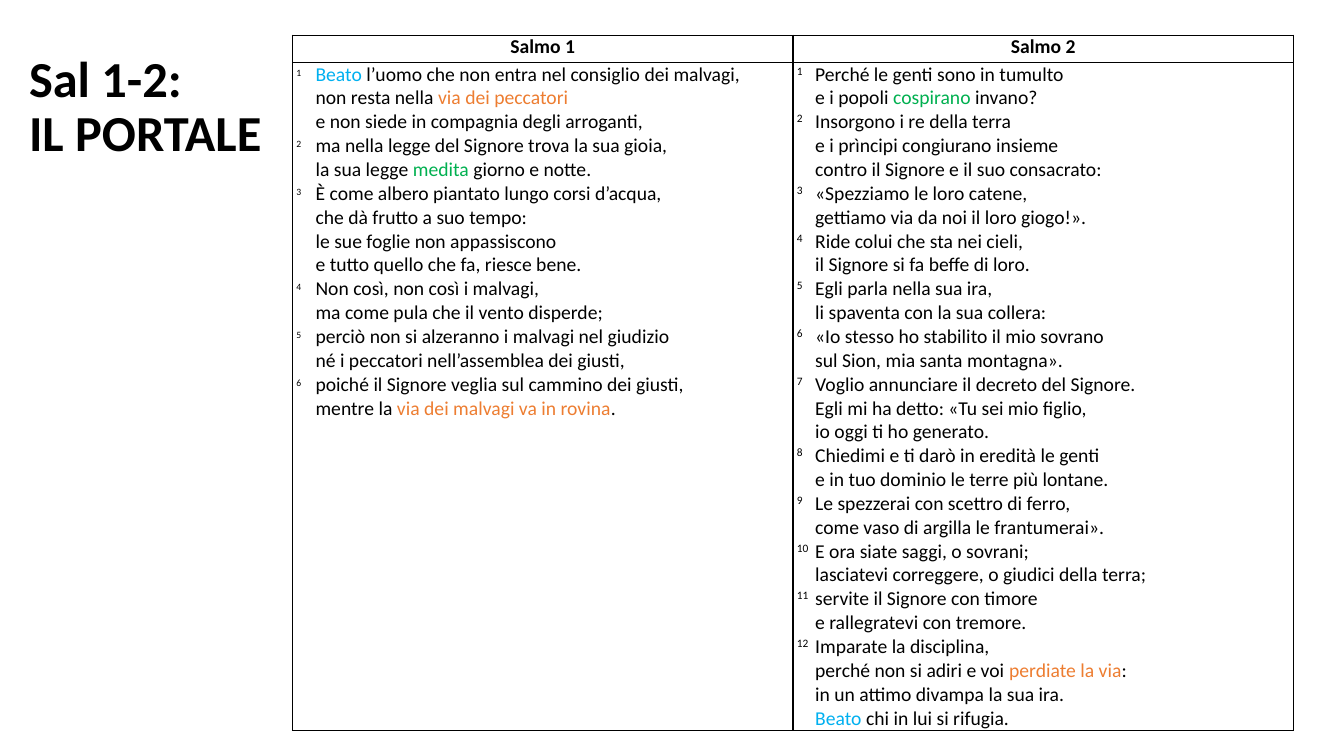
from lxml.etree import SubElement
from pptx import Presentation
from pptx.dml.color import RGBColor
from pptx.enum.text import MSO_ANCHOR, PP_ALIGN
from pptx.oxml.ns import qn
from pptx.util import Emu, Inches, Pt

FONT = "Calibri"
BLACK, BLUE, ORANGE, GREEN = "000000", "00B0F0", "ED7D31", "00B050"

HIGHLIGHTS = {
    "Beato": BLUE,
    "via dei peccatori": ORANGE,
    "via dei malvagi va in rovina": ORANGE,
    "perdiate la via": ORANGE,
    "medita": GREEN,
    "cospirano": GREEN,
}

PSALM_1 = [
    ["Beato l’uomo che non entra nel consiglio dei malvagi,",
     "non resta nella via dei peccatori",
     "e non siede in compagnia degli arroganti,"],
    ["ma nella legge del Signore trova la sua gioia,",
     "la sua legge medita giorno e notte."],
    ["È come albero piantato lungo corsi d’acqua,",
     "che dà frutto a suo tempo:",
     "le sue foglie non appassiscono",
     "e tutto quello che fa, riesce bene."],
    ["Non così, non così i malvagi,",
     "ma come pula che il vento disperde;"],
    ["perciò non si alzeranno i malvagi nel giudizio",
     "né i peccatori nell’assemblea dei giusti,"],
    ["poiché il Signore veglia sul cammino dei giusti,",
     "mentre la via dei malvagi va in rovina."],
]

PSALM_2 = [
    ["Perché le genti sono in tumulto",
     "e i popoli cospirano invano?"],
    ["Insorgono i re della terra",
     "e i prìncipi congiurano insieme",
     "contro il Signore e il suo consacrato:"],
    ["«Spezziamo le loro catene,",
     "gettiamo via da noi il loro giogo!»."],
    ["Ride colui che sta nei cieli,",
     "il Signore si fa beffe di loro."],
    ["Egli parla nella sua ira,",
     "li spaventa con la sua collera:"],
    ["«Io stesso ho stabilito il mio sovrano",
     "sul Sion, mia santa montagna»."],
    ["Voglio annunciare il decreto del Signore.",
     "Egli mi ha detto: «Tu sei mio figlio,",
     "io oggi ti ho generato."],
    ["Chiedimi e ti darò in eredità le genti",
     "e in tuo dominio le terre più lontane."],
    ["Le spezzerai con scettro di ferro,",
     "come vaso di argilla le frantumerai»."],
    ["E ora siate saggi, o sovrani;",
     "lasciatevi correggere, o giudici della terra;"],
    ["servite il Signore con timore",
     "e rallegratevi con tremore."],
    ["Imparate la disciplina,",
     "perché non si adiri e voi perdiate la via:",
     "in un attimo divampa la sua ira.",
     "Beato chi in lui si rifugia."],
]


def rgb(value):
    return RGBColor.from_string(value)


def add_run(p, text, size=14, color=BLACK, bold=False, superscript=False):
    r = p.add_run()
    r.text = text
    r.font.name, r.font.size, r.font.bold = FONT, Pt(size), bold
    r.font.color.rgb = rgb(color)
    if superscript:
        r.font._element.set("baseline", "30000")


def add_tab_stop(p, position):
    tabs = SubElement(p._p.get_or_add_pPr(), qn("a:tabLst"))
    SubElement(tabs, qn("a:tab"), pos=str(Inches(position)), algn="l")


def add_line(p, line):
    phrase = next((h for h in HIGHLIGHTS if h in line), None)
    if phrase is None:
        add_run(p, line)
        return
    before, _, after = line.partition(phrase)
    for text, color in ((before, BLACK), (phrase, HIGHLIGHTS[phrase]), (after, BLACK)):
        if text:
            add_run(p, text, color=color)


def add_verses(tf, verses, number_size, tab):
    p = None
    for number, lines in enumerate(verses, 1):
        for i, line in enumerate(lines):
            p = tf.add_paragraph() if p else tf.paragraphs[0]
            add_tab_stop(p, tab)
            if i == 0:
                add_run(p, f"{number}\t", number_size, superscript=True)
            else:
                add_run(p, "\t")
            add_line(p, line)


def style_cell(cell):
    cell.margin_left = cell.margin_right = Inches(0.04)
    cell.margin_top = cell.margin_bottom = 0
    tcPr = cell._tc.get_or_add_tcPr()
    for side in ("a:lnL", "a:lnR", "a:lnT", "a:lnB"):
        ln = SubElement(tcPr, qn(side), w=str(Pt(1)))
        SubElement(SubElement(ln, qn("a:solidFill")), qn("a:srgbClr"), val=BLACK)
    cell.fill.background()


def add_title(s, lines, left, top, width, height):
    tf = s.shapes.add_textbox(left, top, width, height).text_frame
    tf.word_wrap = True
    tf.vertical_anchor = MSO_ANCHOR.MIDDLE
    p = tf.paragraphs[0]
    p.line_spacing = 0.9
    for i, line in enumerate(lines):
        if i:
            p.add_line_break()
        add_run(p, line, 36, bold=True)


def add_psalms(s, psalms, left, top, width, height):
    table = s.shapes.add_table(2, len(psalms), left, top, width, height).table
    table.first_row = table.horz_banding = False
    table.rows[0].height = Inches(0.27)
    table.rows[1].height = Emu(height - Inches(0.27))
    for column, (heading, verses, number_size, tab) in enumerate(psalms):
        head, body = table.cell(0, column), table.cell(1, column)
        style_cell(head)
        style_cell(body)
        p = head.text_frame.paragraphs[0]
        p.alignment = PP_ALIGN.CENTER
        add_run(p, heading, bold=True)
        add_verses(body.text_frame, verses, number_size, tab)


def main():
    prs = Presentation()
    prs.slide_width, prs.slide_height = Inches(13.33), Inches(7.5)
    s = prs.slides.add_slide(prs.slide_layouts[6])
    top = Inches(0.35)
    add_title(s, ["Sal 1-2:", "IL PORTALE"], Inches(0.19), top, Inches(3.37), Inches(1.45))
    psalms = [("Salmo 1", PSALM_1, 12, 0.19), ("Salmo 2", PSALM_2, 14, 0.18)]
    add_psalms(s, psalms, Inches(2.9), top, Inches(9.93), Inches(6.9))
    prs.save("out.pptx")


if __name__ == "__main__":
    main()
